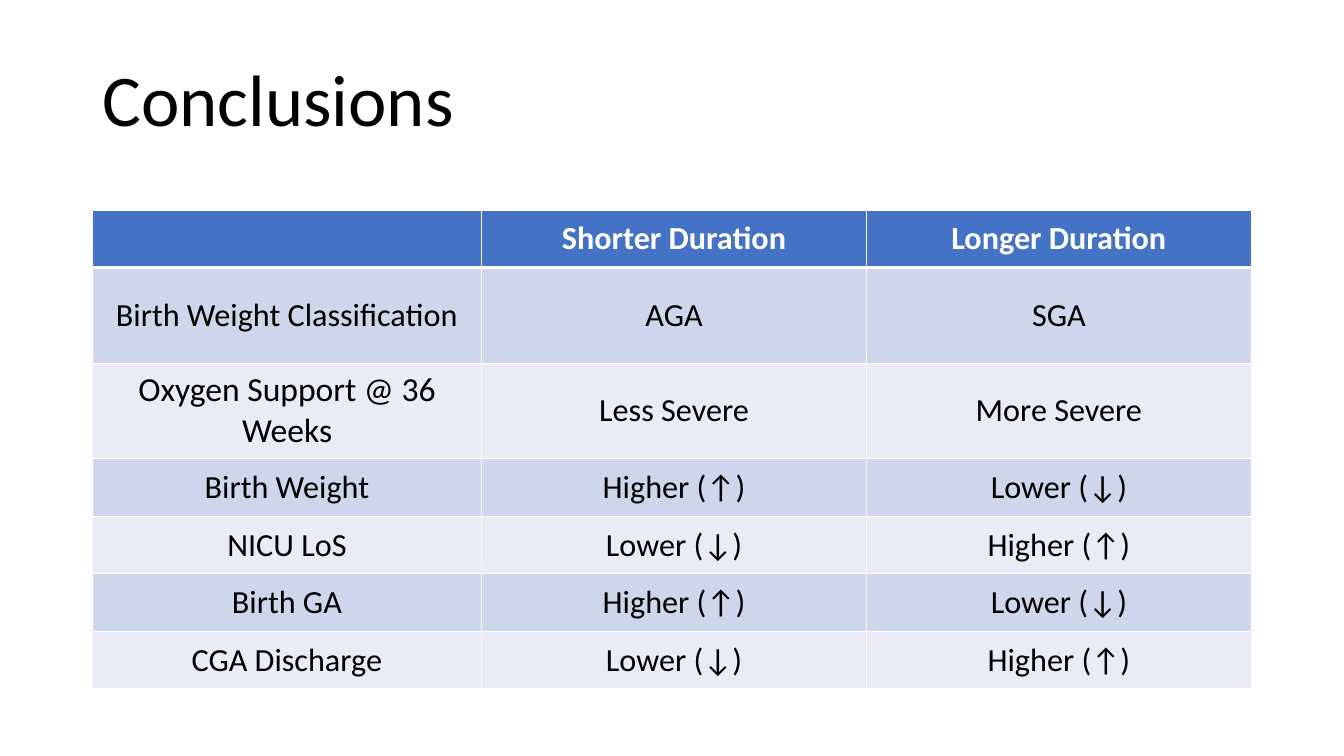
from dataclasses import dataclass

from lxml.etree import SubElement
from pptx import Presentation
from pptx.dml.color import RGBColor
from pptx.enum.text import MSO_ANCHOR, MSO_AUTO_SIZE, PP_ALIGN
from pptx.oxml.ns import qn
from pptx.util import Cm, Pt


@dataclass(frozen=True)
class Theme:
    font: str = "Calibri"
    text: str = "000000"
    white: str = "FFFFFF"
    header: str = "4472C4"
    bands: tuple = ("CFD5EA", "E9EBF5")
    title_size: int = 52
    table_size: int = 23
    large_size: int = 24


THEME = Theme()

HEADINGS = ("", "Shorter Duration", "Longer Duration")
HIGHER, LOWER = "Higher (↑)", "Lower (↓)"
FINDINGS = (
    ("Birth Weight Classification", "AGA", "SGA"),
    ("Oxygen Support @ 36 Weeks", "Less Severe", "More Severe"),
    ("Birth Weight", HIGHER, LOWER),
    ("NICU LoS", LOWER, HIGHER),
    ("Birth GA", HIGHER, LOWER),
    ("CGA Discharge", LOWER, HIGHER),
)
COLUMN_WIDTHS = (9.81, 9.7, 9.7)
ROW_HEIGHTS = (1.45, 2.41, 2.41, 1.45, 1.45, 1.45, 1.45)


def write_text(frame, text, size, color=THEME.text, bold=False,
               align=PP_ALIGN.LEFT, line_spacing=1.0):
    paragraph = frame.paragraphs[0]
    paragraph.alignment = align
    paragraph.line_spacing = line_spacing
    run = paragraph.add_run()
    run.text = text
    run.font.name = THEME.font
    run.font.size = Pt(size)
    run.font.bold = bold
    run.font.color.rgb = RGBColor.from_string(color)


class SlideBuilder:
    def __init__(self, slide, theme):
        self.slide = slide
        self.theme = theme

    def title(self, text, left, top, width, height):
        shape = self.slide.shapes.title
        shape.left, shape.top = Cm(left), Cm(top)
        shape.width, shape.height = Cm(width), Cm(height)
        frame = shape.text_frame
        frame.word_wrap = True
        frame.auto_size = MSO_AUTO_SIZE.NONE
        frame.vertical_anchor = MSO_ANCHOR.MIDDLE
        write_text(frame, text, self.theme.title_size, line_spacing=0.9)

    def borders(self, cell, bottom):
        properties = cell._tc.get_or_add_tcPr()
        widths = {"a:lnL": 1, "a:lnR": 1, "a:lnT": 1, "a:lnB": bottom}
        for position, (side, width) in enumerate(widths.items()):
            line = SubElement(properties, qn(side), w=str(Pt(width)))
            fill = SubElement(line, qn("a:solidFill"))
            SubElement(fill, qn("a:srgbClr"), val=self.theme.white)
            properties.insert(position, line)

    def cell(self, cell, text, fill, bottom=1, **text_format):
        cell.fill.solid()
        cell.fill.fore_color.rgb = RGBColor.from_string(fill)
        cell.vertical_anchor = MSO_ANCHOR.MIDDLE
        cell.margin_left = cell.margin_right = Cm(0.33)
        cell.margin_top = cell.margin_bottom = Cm(0.16)
        if text:
            write_text(cell.text_frame, text, align=PP_ALIGN.CENTER, **text_format)
        self.borders(cell, bottom)

    def table(self, headings, rows, left, top, widths, heights):
        theme = self.theme
        table = self.slide.shapes.add_table(
            len(heights), len(widths), Cm(left), Cm(top),
            Cm(sum(widths)), Cm(sum(heights))).table
        for column, width in zip(table.columns, widths):
            column.width = Cm(width)
        for row, height in zip(table.rows, heights):
            row.height = Cm(height)

        # Header row
        for column, heading in enumerate(headings):
            self.cell(table.cell(0, column), heading, theme.header, bottom=3,
                      size=theme.table_size, color=theme.white, bold=True)

        # Banded rows
        for index, row in enumerate(rows):
            for column, text in enumerate(row):
                large = text.startswith("Oxygen")
                self.cell(table.cell(index + 1, column), text, theme.bands[index % 2],
                          size=theme.large_size if large else theme.table_size)


def main():
    presentation = Presentation()
    presentation.slide_width, presentation.slide_height = Cm(33.87), Cm(19.05)
    title_only = presentation.slide_layouts[5]
    builder = SlideBuilder(presentation.slides.add_slide(title_only), THEME)

    builder.title("Conclusions", 2.33, 0.51, 29.21, 4.19)
    builder.table(HEADINGS, FINDINGS, 2.33, 5.29, COLUMN_WIDTHS, ROW_HEIGHTS)

    presentation.save("out.pptx")


if __name__ == "__main__":
    main()
